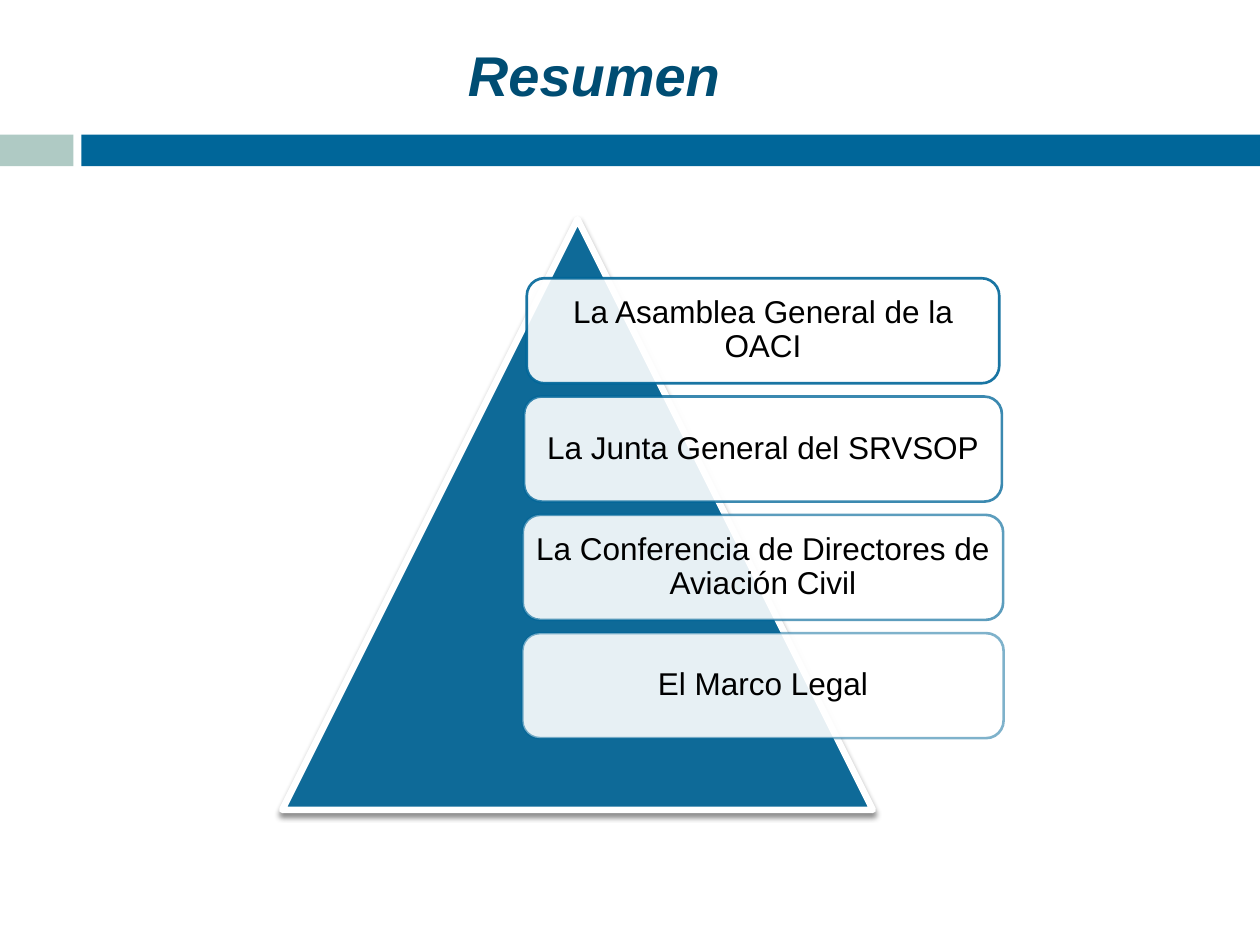
"""Builds the summary slide: a pyramid with four overlapping labels."""
from lxml.etree import SubElement
from pptx import Presentation
from pptx.dml.color import RGBColor
from pptx.enum.shapes import MSO_SHAPE
from pptx.enum.text import MSO_ANCHOR, PP_ALIGN
from pptx.oxml.ns import qn
from pptx.util import Pt

TITLE = "Resumen"
LEVELS = [
    ("La Asamblea General de la OACI", 270, 90),
    ("La Junta General del SRVSOP", 273, 77),
    ("La Conferencia de Directores de Aviación Civil", 274.5, 63),
    ("El Marco Legal", 275, 50),
]
BLUE = RGBColor(0x00, 0x66, 0x99)
NAVY = RGBColor(0x00, 0x4D, 0x73)
SAGE = RGBColor(0xAF, 0xCA, 0xC4)
WHITE = RGBColor(0xFF, 0xFF, 0xFF)
BLACK = RGBColor(0x00, 0x00, 0x00)
BARS = [(0, 42, SAGE), (46.5, 673.5, BLUE)]
BAR_TOP, BAR_HEIGHT = 77, 18
LABEL_CENTER, LABEL_TOP, LABEL_HEIGHT, LABEL_PITCH = 436, 159, 60, 67.6


def set_alpha(fill_parent, percent):
    color = fill_parent.find(qn("a:solidFill"))[0]
    SubElement(color, qn("a:alpha"), val=str(percent * 1000))


def add_shape(s, kind, box, color):
    sp = s.shapes.add_shape(kind, *map(Pt, box))
    sp.shadow.inherit = False
    sp.fill.solid()
    sp.fill.fore_color.rgb = color
    sp.line.fill.background()
    return sp


def set_line(sp, color, width):
    sp.line.color.rgb = color
    sp.line.width = Pt(width)


def write(sp, text, size, color):
    tf = sp.text_frame
    tf.text = text
    tf.word_wrap = True
    tf.vertical_anchor = MSO_ANCHOR.MIDDLE
    p = tf.paragraphs[0]
    p.alignment = PP_ALIGN.CENTER
    font = p.runs[0].font
    font.name, font.size, font.color.rgb = "Arial", Pt(size), color
    return p


def add_pyramid(s):
    sp = add_shape(s, MSO_SHAPE.ISOSCELES_TRIANGLE, (161.3, 125.3, 337.5, 337.5), BLUE)
    set_alpha(sp._element.spPr, 90)
    set_line(sp, WHITE, 3.75)
    SubElement(sp.line._ln, qn("a:round"))
    effects = sp._element.spPr.find(qn("a:effectLst"))
    shadow = SubElement(effects, qn("a:outerShdw"), blurRad=str(Pt(3)),
                        dist=str(Pt(2.4)), dir="5400000", rotWithShape="0")
    color = SubElement(shadow, qn("a:srgbClr"), val=str(BLACK))
    SubElement(color, qn("a:alpha"), val="45000")


def add_label(s, index, text, width, line_alpha):
    box = (LABEL_CENTER - width / 2, LABEL_TOP + index * LABEL_PITCH, width, LABEL_HEIGHT)
    sp = add_shape(s, MSO_SHAPE.ROUNDED_RECTANGLE, box, WHITE)
    set_alpha(sp._element.spPr, 90)
    set_line(sp, BLUE, 1.5)
    set_alpha(sp.line._ln, line_alpha)
    tf = sp.text_frame
    tf.margin_left = tf.margin_right = tf.margin_top = tf.margin_bottom = Pt(2)
    p = write(sp, text, 18, BLACK)
    p.line_spacing = 0.9
    p.space_after = Pt(6.3)


def main():
    prs = Presentation()
    prs.slide_width, prs.slide_height = Pt(720), Pt(540)
    s = prs.slides.add_slide(prs.slide_layouts[5])

    for left, width, color in BARS:
        add_shape(s, MSO_SHAPE.RECTANGLE, (left, BAR_TOP, width, BAR_HEIGHT), color)

    title = s.shapes.title
    title.left, title.top, title.width, title.height = map(Pt, (18.5, 18, 642, 48.5))
    font = write(title, TITLE, 32, NAVY).runs[0].font
    font.bold = font.italic = True

    add_pyramid(s)
    for index, level in enumerate(LEVELS):
        add_label(s, index, *level)
    prs.save("out.pptx")


if __name__ == "__main__":
    main()
